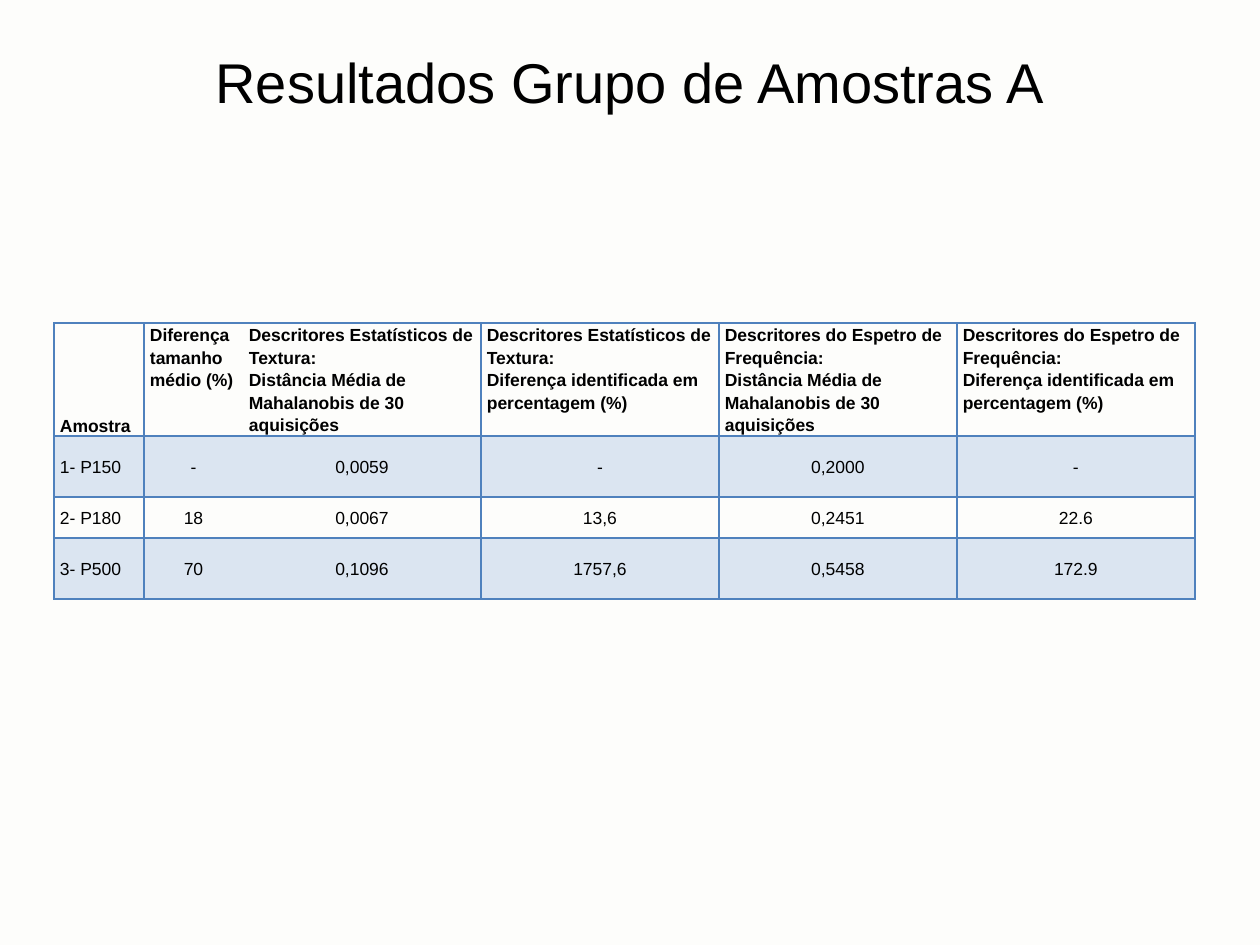
from dataclasses import dataclass

from lxml import etree
from pptx import Presentation
from pptx import util as u
from pptx.dml.color import RGBColor
from pptx.enum import text
from pptx.oxml.ns import qn

EMU_PER_PX = 914400 / 126


def px(length):
    return u.Emu(round(length * EMU_PER_PX))


@dataclass(frozen=True)
class Theme:
    font: str = "Arial"
    ink: str = "000000"
    paper: str = "FDFDFB"
    band: str = "DBE5F1"
    rule: str = "4F81BD"
    title_size: int = 32
    table_size: int = 10
    rule_width: int = 1
    line_spacing: float = 1.15


class SlideBuilder:
    def __init__(self, deck, theme):
        self.theme = theme
        self.slide = deck.slides.add_slide(deck.slide_layouts[6])
        fill = self.slide.background.fill
        fill.solid()
        fill.fore_color.rgb = RGBColor.from_string(theme.paper)

    def style(self, para, size, bold=False, centred=False):
        para.font.name = self.theme.font
        para.font.size = u.Pt(size)
        para.font.bold = bold
        para.font.color.rgb = RGBColor.from_string(self.theme.ink)
        para.alignment = text.PP_ALIGN.CENTER if centred else text.PP_ALIGN.LEFT

    def title(self, wording, left, top, width, height):
        box = self.slide.shapes.add_textbox(px(left), px(top), px(width), px(height))
        frame = box.text_frame
        frame.word_wrap = True
        frame.vertical_anchor = text.MSO_ANCHOR.MIDDLE
        frame.text = wording
        self.style(frame.paragraphs[0], self.theme.title_size, centred=True)

    def borders(self, cell, hidden):
        """Rule all four sides of a cell except those named in hidden."""
        properties = cell._tc.get_or_add_tcPr()
        for index, side in enumerate("LRTB"):
            line = etree.Element(qn(f"a:ln{side}"), w=str(u.Pt(self.theme.rule_width)))
            if side in hidden:
                etree.SubElement(line, qn("a:noFill"))
            else:
                solid = etree.SubElement(line, qn("a:solidFill"))
                etree.SubElement(solid, qn("a:srgbClr"), val=self.theme.rule)
            properties.insert(index, line)

    def cell(self, cell, wording, anchor, filled, bold, centred, hidden):
        cell.margin_left = cell.margin_right = px(6)
        cell.margin_top = cell.margin_bottom = 0
        cell.vertical_anchor = anchor
        cell.text = wording
        for para in cell.text_frame.paragraphs:
            self.style(para, self.theme.table_size, bold, centred)
            para.line_spacing = self.theme.line_spacing
        if filled:
            cell.fill.solid()
            cell.fill.fore_color.rgb = RGBColor.from_string(self.theme.band)
        else:
            cell.fill.background()
        self.borders(cell, hidden)

    def table(self, rows, left, top, widths, heights, open_after):
        """Draw a banded table with no rule to the right of column open_after."""
        table = self.slide.shapes.add_table(
            len(rows), len(widths), px(left), px(top), px(sum(widths)), px(sum(heights))
        ).table
        table.first_row = table.horz_banding = False
        for column, width in zip(table.columns, widths):
            column.width = px(width)
        for row, height in zip(table.rows, heights):
            row.height = px(height)
        hidden_sides = {open_after: "R", open_after + 1: "L"}
        for r, row in enumerate(rows):
            for c, wording in enumerate(row):
                if r:
                    anchor = text.MSO_ANCHOR.MIDDLE
                else:
                    anchor = text.MSO_ANCHOR.TOP if c else text.MSO_ANCHOR.BOTTOM
                self.cell(
                    table.cell(r, c), wording, anchor,
                    filled=r % 2 == 1, bold=r == 0, centred=r > 0 and c > 0,
                    hidden=hidden_sides.get(c, ""),
                )


def main():
    deck = Presentation()
    deck.slide_width, deck.slide_height = px(1260), px(945)
    page = SlideBuilder(deck, Theme())

    descriptors = ("Descritores Estatísticos de Textura:", "Descritores do Espetro de Frequência:")
    measures = (
        "Distância Média de Mahalanobis de 30 aquisições",
        "Diferença identificada em percentagem (%)",
    )
    header = ["Amostra", "Diferença tamanho médio (%)"]
    header += [f"{descriptor}\n{measure}" for descriptor in descriptors for measure in measures]
    samples = [
        ["1- P150", "-", "0,0059", "-", "0,2000", "-"],
        ["2- P180", "18", "0,0067", "13,6", "0,2451", "22.6"],
        ["3- P500", "70", "0,1096", "1757,6", "0,5458", "172.9"],
    ]
    page.table(
        [header, *samples], left=54, top=323,
        widths=[90, 99] + [238] * 4, heights=[113, 61, 41, 61], open_after=1,
    )
    page.title("Resultados Grupo de Amostras A", left=84, top=27, width=1092, height=108)
    deck.save("out.pptx")


if __name__ == "__main__":
    main()
